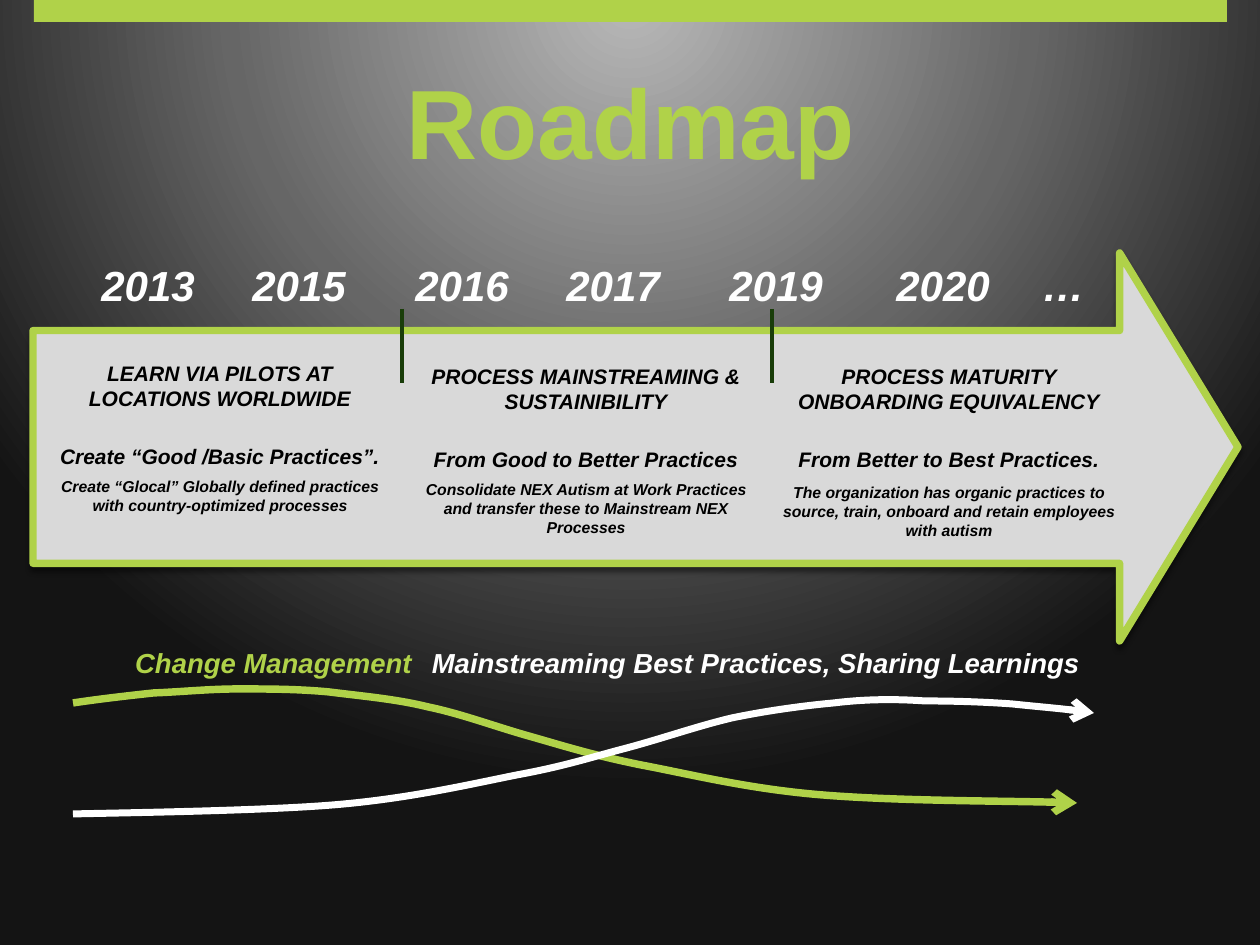
import pptx
import pptx.dml.color
import pptx.enum.shapes
import pptx.enum.text
import pptx.oxml
import pptx.oxml.ns
import pptx.util

PX = 914400 / 126
NAMESPACES = pptx.oxml.ns.nsdecls("a", "p")
SHAPES = pptx.enum.shapes.MSO_SHAPE
CENTER = pptx.enum.text.PP_ALIGN.CENTER

GREEN, WHITE, BLACK = "B0D249", "FFFFFF", "000000"
GRADIENT = [(0, "B8B8B8"), (51, "666666"), (100, "141414")]
YEARS = [("2013", 102), ("2015", 253), ("2016", 416), ("2017", 567),
         ("2019", 730), ("2020", 897), ("…", 1043)]
TICKS = [402, 772]

# Box, heading, goal, detail, space before the detail
PHASES = [
    ((34, 354, 372, 200), "LEARN VIA PILOTS AT LOCATIONS WORLDWIDE",
     "Create “Good /Basic Practices”.",
     "Create “Glocal” Globally defined practices with country-optimized processes", 4.5),
    ((401, 357, 370, 271), "PROCESS MAINSTREAMING & SUSTAINIBILITY",
     "From Good to Better Practices",
     "Consolidate NEX Autism at Work Practices and transfer these to Mainstream NEX Processes",
     4.5),
    ((770, 357, 358, 215), "PROCESS MATURITY ONBOARDING EQUIVALENCY",
     "From Better to Best Practices.",
     "The organization has organic practices to source, train, onboard and retain "
     "employees with autism", 6),
]

# Start point, then two control points and an end point for each curve piece
CHANGE_CURVE = [
    (73, 703), (100, 699), (126, 696), (154, 693), (181, 692), (209, 689), (238, 689),
    (268, 689), (297, 689), (329, 692), (360, 696), (396, 699), (428, 707),
    (462, 714), (496, 727), (532, 737), (567, 747), (592, 755), (641, 765),
    (689, 774), (748, 789), (822, 795), (895, 801), (1034, 801), (1077, 803)]
SHARING_CURVE = [
    (73, 814), (117, 813), (260, 811), (333, 805), (407, 799), (467, 785), (517, 775),
    (566, 766), (592, 757), (627, 748), (664, 738), (698, 726), (732, 718),
    (766, 711), (801, 706), (834, 703), (866, 699), (896, 699), (925, 701),
    (955, 701), (984, 702), (1012, 704), (1041, 707), (1067, 709), (1094, 713)]


def px(*lengths):
    return [round(length * PX) for length in lengths]


def rgb(color):
    return pptx.dml.color.RGBColor.from_string(color)


def apply_format(target, values):
    for name, value in values.items():
        setattr(target, name, value)


def xml(text):
    return pptx.oxml.parse_xml(text.replace(">", f" {NAMESPACES}>", 1))


def set_background(slide):
    stops = "".join(f'<a:gs pos="{position * 1000}"><a:srgbClr val="{color}"/></a:gs>'
                    for position, color in GRADIENT)
    slide.element.cSld.insert(0, xml(
        f'<p:bg><p:bgPr><a:gradFill rotWithShape="1"><a:gsLst>{stops}</a:gsLst>'
        '<a:path path="circle"><a:fillToRect l="50000" t="-80000" r="50000" b="180000"/>'
        '</a:path></a:gradFill><a:effectLst/></p:bgPr></p:bg>'))


def set_line(shape, color, width):
    shape.line.color.rgb = rgb(color)
    shape.line.width = pptx.util.Pt(width)


def write(paragraph, text, size, color, alignment=None, before=0, italic=True):
    paragraph.text = text
    apply_format(paragraph, {"alignment": alignment, "line_spacing": 1.0,
                             "space_before": pptx.util.Pt(before)})
    apply_format(paragraph.runs[0].font, {"name": "Arial", "size": pptx.util.Pt(size),
                                          "bold": True, "italic": italic})
    paragraph.runs[0].font.color.rgb = rgb(color)


def place(shape, box):
    apply_format(shape, dict(zip(("left", "top", "width", "height"), px(*box))))
    apply_format(shape.text_frame, {
        "word_wrap": True,
        "auto_size": pptx.enum.text.MSO_AUTO_SIZE.NONE,
        "vertical_anchor": pptx.enum.text.MSO_ANCHOR.TOP})


def add_title(slide):
    title = slide.shapes.title
    place(title, (34, 44, 1193, 105))
    title.text_frame.margin_top = px(17)[0]
    write(title.text_frame.paragraphs[0], "Roadmap", 56.2, GREEN, CENTER, italic=False)


def add_label(slide, text, box, size, color, alignment=None):
    label = slide.shapes.add_textbox(*px(*box))
    place(label, box)
    write(label.text_frame.paragraphs[0], text, size, color, alignment)


def fill_phase(placeholder, box, heading, goal, detail, detail_gap):
    place(placeholder, box)
    frame = placeholder.text_frame
    lines = [(heading, 12, 0), (goal, 12, 19), (detail, 9, detail_gap)]
    for index, (text, size, before) in enumerate(lines):
        paragraph = frame.add_paragraph() if index else frame.paragraphs[0]
        write(paragraph, text, size, BLACK, CENTER, before)
        properties = paragraph._p.get_or_add_pPr()
        properties.set("marL", "0")
        properties.set("indent", "0")
        properties.append(xml("<a:buNone></a:buNone>"))


def add_solid(slide, kind, box, color):
    shape = slide.shapes.add_shape(kind, *px(*box))
    shape.shadow.inherit = False
    shape.fill.solid()
    shape.fill.fore_color.rgb = rgb(color)
    shape.line.fill.background()
    return shape


def add_arrow(slide):
    arrow = add_solid(slide, SHAPES.RIGHT_ARROW, (33, 253, 1205, 388), "D9D9D9")
    arrow.adjustments[0], arrow.adjustments[1] = 0.6, 0.305
    set_line(arrow, GREEN, 4.25)
    effects = arrow.element.spPr.find(pptx.oxml.ns.qn("a:effectLst"))
    effects.append(xml(
        '<a:outerShdw blurRad="38100" dist="30480" dir="5400000" rotWithShape="0">'
        '<a:srgbClr val="000000"><a:alpha val="45000"/></a:srgbClr></a:outerShdw>'))


def add_tick(slide, x):
    tick = slide.shapes.add_connector(pptx.enum.shapes.MSO_CONNECTOR.STRAIGHT,
                                      *px(x, 309, x, 383))
    set_line(tick, "193D09", 2.5)
    tick.element.spPr.append(xml("<a:effectLst></a:effectLst>"))


def add_curve(slide, points, color, width):
    """Draw a Bezier curve that ends in an open arrowhead."""
    builder = slide.shapes.build_freeform(*points[0], scale=PX)
    builder.add_line_segments(points[1:], close=False)
    curve = builder.convert_to_shape()
    segments = list(curve.element.iter(pptx.oxml.ns.qn("a:lnTo")))
    for first in range(0, len(segments), 3):
        bezier = xml("<a:cubicBezTo></a:cubicBezTo>")
        segments[first].addprevious(bezier)
        for segment in segments[first:first + 3]:
            bezier.append(segment[0])
            segment.getparent().remove(segment)
    curve.shadow.inherit = False
    curve.fill.background()
    set_line(curve, color, width)
    curve.line._get_or_add_ln().append(xml('<a:tailEnd type="arrow"></a:tailEnd>'))


def main():
    presentation = pptx.Presentation()
    presentation.slide_width, presentation.slide_height = px(1260, 945)
    slide = presentation.slides.add_slide(
        presentation.slide_layouts.get_by_name("Comparison"))
    set_background(slide)
    add_solid(slide, SHAPES.RECTANGLE, (34, 0, 1193, 22), GREEN)
    add_title(slide)
    add_arrow(slide)
    for x in TICKS:
        add_tick(slide, x)
    for year, x in YEARS:
        add_label(slide, year, (x - 13, 253, 126, 63), 24, WHITE)

    *bodies, unused = list(slide.placeholders)[1:]
    unused.element.getparent().remove(unused.element)
    for body, phase in zip(bodies, PHASES):
        fill_phase(body, *phase)
        slide.shapes._spTree.append(body.element)  # in front of the arrow

    add_label(slide, "Mainstreaming Best Practices, Sharing Learnings",
              (415, 640, 682, 47), 15.7, WHITE, CENTER)
    add_curve(slide, CHANGE_CURVE, GREEN, 4.25)
    add_curve(slide, SHARING_CURVE, WHITE, 4)
    add_label(slide, "Change Management", (121, 640, 305, 47), 15.7, GREEN, CENTER)
    presentation.save("out.pptx")


if __name__ == "__main__":
    main()
